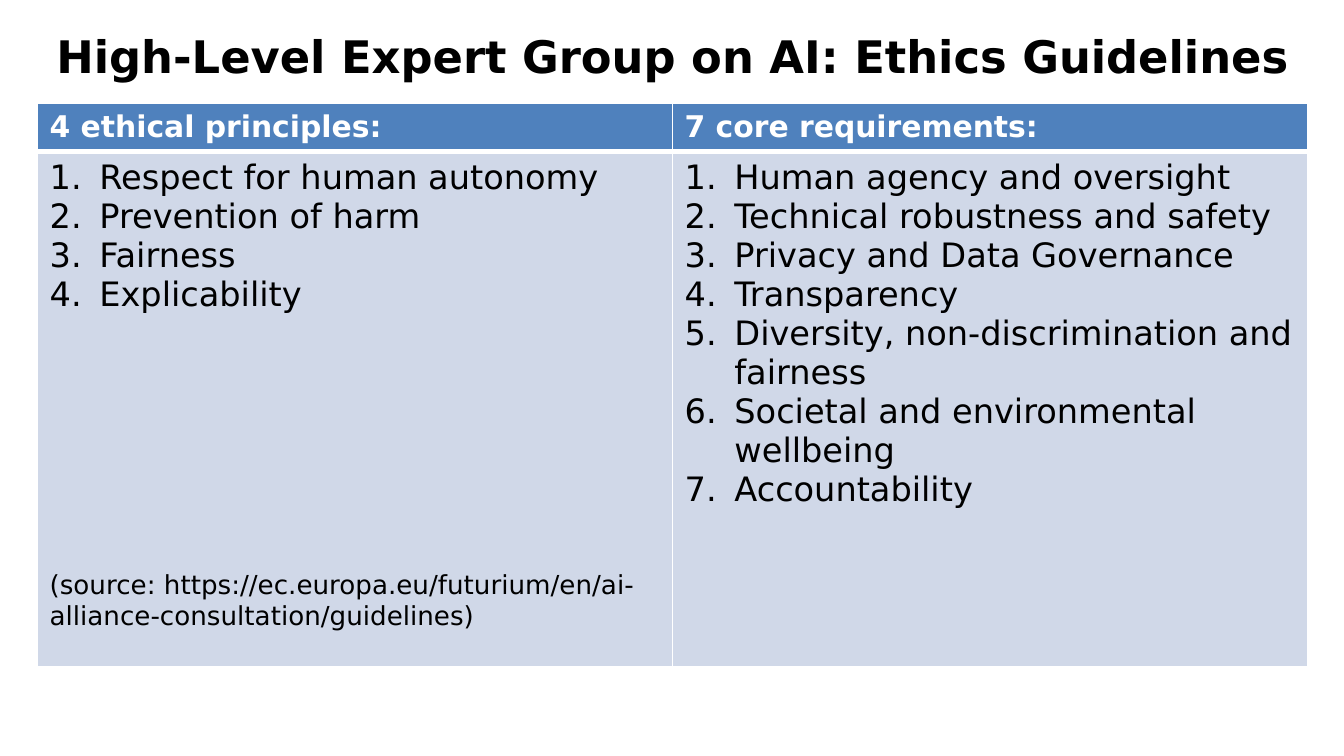
"""Build a slide with the ethical principles and core requirements for AI."""
import lxml.etree
import pptx
import pptx.dml.color
import pptx.enum.text
import pptx.oxml.ns
import pptx.util

BLACK = pptx.dml.color.RGBColor(0x00, 0x00, 0x00)
WHITE = pptx.dml.color.RGBColor(0xFF, 0xFF, 0xFF)
HEADER_BLUE = pptx.dml.color.RGBColor(0x4F, 0x81, 0xBD)
BODY_BLUE = pptx.dml.color.RGBColor(0xD0, 0xD8, 0xE8)

TITLE_FORMAT = {"size": pptx.util.Pt(24), "bold": True, "color": BLACK}
HEADER_FORMAT = {"size": pptx.util.Pt(16), "bold": True, "color": WHITE}
ITEM_FORMAT = {"size": pptx.util.Pt(18), "bold": False, "color": BLACK}
SOURCE_FORMAT = {"size": pptx.util.Pt(14), "bold": False, "color": BLACK}
CELL_FORMAT = {
    "margin_left": pptx.util.Inches(0.09),
    "margin_right": pptx.util.Inches(0.09),
    "margin_top": pptx.util.Inches(0.05),
    "margin_bottom": pptx.util.Inches(0.05),
}
HEADER_BORDERS = {"lnL": 1, "lnR": 1, "lnT": 1, "lnB": 3}
BODY_BORDERS = {"lnL": 1, "lnR": 1, "lnT": 3, "lnB": 1}

COLUMNS = {
    "4 ethical principles:": [
        "Respect for human autonomy",
        "Prevention of harm",
        "Fairness",
        "Explicability",
    ],
    "7 core requirements:": [
        "Human agency and oversight",
        "Technical robustness and safety",
        "Privacy and Data Governance",
        "Transparency",
        "Diversity, non-discrimination and fairness",
        "Societal and environmental wellbeing",
        "Accountability",
    ],
}
SOURCE = "(source: https://ec.europa.eu/futurium/en/ai-alliance-consultation/guidelines)"


def add_span(para, text, text_format):
    span = para.add_run()
    span.text = text
    span.font.name = "DejaVu Sans"
    for name, value in text_format.items():
        if name == "color":
            span.font.color.rgb = value
        else:
            setattr(span.font, name, value)


def format_cell(cell, color, borders):
    for name, value in CELL_FORMAT.items():
        setattr(cell, name, value)
    properties = cell._tc.get_or_add_tcPr()
    for side, width in borders.items():
        line = lxml.etree.SubElement(properties, pptx.oxml.ns.qn(f"a:{side}"))
        line.set("w", str(pptx.util.Pt(width)))
        line_fill = lxml.etree.SubElement(line, pptx.oxml.ns.qn("a:solidFill"))
        line_color = lxml.etree.SubElement(line_fill, pptx.oxml.ns.qn("a:srgbClr"))
        line_color.set("val", str(WHITE))
    cell.fill.solid()
    cell.fill.fore_color.rgb = color


deck = pptx.Presentation()
deck.slide_width = pptx.util.Inches(10)
deck.slide_height = deck.slide_width * 9 // 16
page = deck.slides.add_slide(deck.slide_layouts[5])

margin = pptx.util.Inches(0.28)
content_width = pptx.util.Inches(9.45)
header_height = pptx.util.Inches(0.36)
body_height = pptx.util.Inches(3.83)
indent = pptx.util.Inches(0.37)

title = page.shapes.title
title_place = {
    "left": margin,
    "top": pptx.util.Inches(0.15),
    "width": content_width,
    "height": pptx.util.Inches(0.53),
}
for name, value in title_place.items():
    setattr(title, name, value)
title_frame = {
    "word_wrap": True,
    "auto_size": pptx.enum.text.MSO_AUTO_SIZE.NONE,
    "vertical_anchor": pptx.enum.text.MSO_ANCHOR.MIDDLE,
}
for name, value in title_frame.items():
    setattr(title.text_frame, name, value)
title_para = title.text_frame.paragraphs[0]
title_para.alignment = pptx.enum.text.PP_ALIGN.CENTER
add_span(title_para, "High-Level Expert Group on AI: Ethics Guidelines", TITLE_FORMAT)

table = page.shapes.add_table(
    2, len(COLUMNS), margin, pptx.util.Inches(0.77),
    content_width, header_height + body_height,
).table
table.rows[0].height = header_height
table.rows[1].height = body_height

for column, (heading, items) in enumerate(COLUMNS.items()):
    header, body = table.cell(0, column), table.cell(1, column)
    format_cell(header, HEADER_BLUE, HEADER_BORDERS)
    format_cell(body, BODY_BLUE, BODY_BORDERS)
    add_span(header.text_frame.paragraphs[0], heading, HEADER_FORMAT)
    for index, item in enumerate(items):
        frame = body.text_frame
        para = frame.add_paragraph() if index else frame.paragraphs[0]
        properties = para._p.get_or_add_pPr()
        properties.set("marL", str(indent))
        properties.set("indent", str(-indent))
        numbering = lxml.etree.SubElement(properties, pptx.oxml.ns.qn("a:buAutoNum"))
        numbering.set("type", "arabicPeriod")
        add_span(para, item, ITEM_FORMAT)

source_para = table.cell(1, 0).text_frame.add_paragraph()
source_para.space_before = pptx.util.Pt(137)
add_span(source_para, SOURCE, SOURCE_FORMAT)

deck.save("out.pptx")
